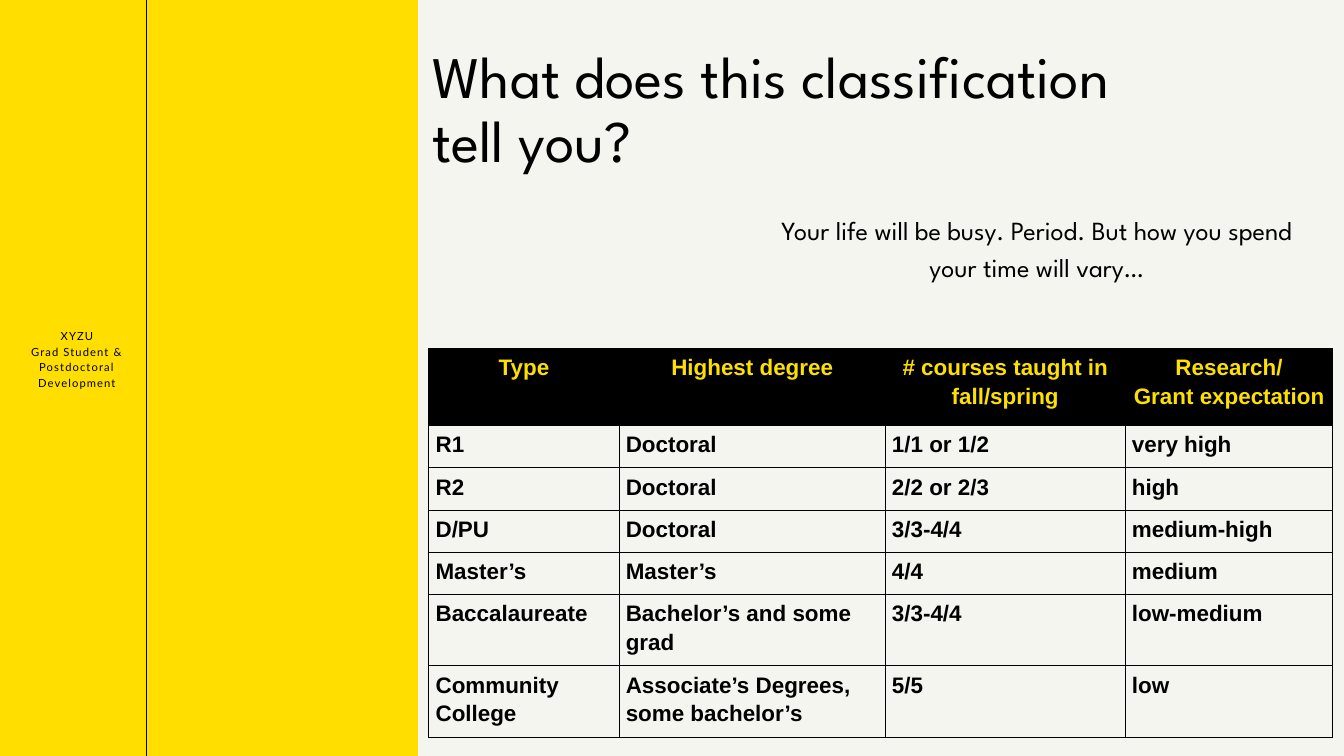
import pptx
import pptx.dml.color
import pptx.enum.shapes
import pptx.enum.text
import pptx.oxml
import pptx.oxml.ns
import pptx.util
from lxml import etree

Cm = pptx.util.Cm
Pt = pptx.util.Pt
RGBColor = pptx.dml.color.RGBColor
ALIGN = pptx.enum.text.PP_ALIGN

YELLOW = RGBColor(0xFF, 0xDE, 0x00)
GOLD = RGBColor(0xFD, 0xDF, 0x00)
BLACK = RGBColor(0x00, 0x00, 0x00)
PAPER = RGBColor(0xF5, 0xF5, 0xEF)

PAGE_WIDTH, PAGE_HEIGHT = Cm(50.8), Cm(28.58)

TITLE = {"name": "League Spartan", "size": Pt(63.1)}
REMARK = {"name": "League Spartan", "size": Pt(28)}
LABEL = {"name": "Lato", "size": Pt(12)}
CELL = {"name": "Arial", "size": Pt(24), "bold": True}

COLUMN_WIDTHS = [7.19, 10.06, 9.07, 7.85]
ROW_HEIGHTS = [2.9] + [1.6] * 4 + [2.69] * 2
ROWS = [
    ["Type", "Highest degree", "# courses taught in fall/spring", "Research/\nGrant expectation"],
    ["R1", "Doctoral", "1/1 or 1/2", "very high"],
    ["R2", "Doctoral", "2/2 or 2/3", "high"],
    ["D/PU", "Doctoral", "3/3-4/4", "medium-high"],
    ["Master’s", "Master’s", "4/4", "medium"],
    ["Baccalaureate", "Bachelor’s and some grad", "3/3-4/4", "low-medium"],
    ["Community College", "Associate’s Degrees, some bachelor’s", "5/5", "low"],
]


def write_para(para, text, font, color, align, line_spacing, tracking=None):
    """Fill one paragraph and format its runs."""
    para.text = text
    para.alignment = align
    para.line_spacing = line_spacing
    for span in para.runs:
        for key, value in font.items():
            setattr(span.font, key, value)
        span.font.color.rgb = color
        if tracking:
            span.font._element.set("spc", str(tracking))


def add_text(page, box, lines, font, align, line_spacing, tracking=None):
    """Place a text box without margins, one paragraph for each line."""
    frame = page.shapes.add_textbox(*box).text_frame
    layout = {"word_wrap": True, "margin_left": 0, "margin_top": 0,
              "margin_right": 0, "margin_bottom": 0}
    for key, value in layout.items():
        setattr(frame, key, value)
    for index, line in enumerate(lines):
        para = frame.paragraphs[0] if index == 0 else frame.add_paragraph()
        write_para(para, line, font, BLACK, align, line_spacing, tracking)


def add_side_panel(page, left, top, width, height):
    """Draw the yellow panel with its vertical rule and department label."""
    panel = page.shapes.add_shape(
        pptx.enum.shapes.MSO_SHAPE.RECTANGLE, left, top, width, height)
    panel.shadow.inherit = False
    panel.fill.solid()
    panel.fill.fore_color.rgb = YELLOW
    panel.line.fill.background()

    rule_x = left + Cm(5.55)
    rule = page.shapes.add_connector(
        pptx.enum.shapes.MSO_CONNECTOR.STRAIGHT, rule_x, top, rule_x, top + height)
    rule.line.color.rgb = BLACK
    rule.line.width = Pt(1)
    etree.SubElement(rule._element.spPr, pptx.oxml.ns.qn("a:effectLst"))

    label_box = (left + Cm(0.84), top + Cm(12.37), Cm(4.14), Cm(2.39))
    add_text(page, label_box, ["XYZU", "Grad Student & Postdoctoral Development"],
             LABEL, ALIGN.CENTER, Pt(16.8), 120)


def add_heading(page, left, top, width):
    """Place the title and, to the right below it, the remark."""
    add_text(page, (left, top, Cm(27.66), Cm(4.98)),
             ["What does this classification tell you?"],
             TITLE, ALIGN.LEFT, Pt(69.5))
    remark_width = Cm(20.8)
    add_text(page, (left + width - remark_width, top + Cm(6.22), remark_width, Cm(2.72)),
             ["Your life will be busy. Period. But how you spend your time will vary…"],
             REMARK, ALIGN.CENTER, Pt(39.2))


def add_cell_borders(cell):
    """Give a cell a thin black border on all sides."""
    properties = cell._tc.get_or_add_tcPr()
    for index, side in enumerate(("lnL", "lnR", "lnT", "lnB")):
        properties.insert(index, pptx.oxml.parse_xml(
            f'<a:{side} {pptx.oxml.ns.nsdecls("a")} w="{Pt(1)}"><a:solidFill>'
            f'<a:srgbClr val="{BLACK}"/></a:solidFill></a:{side}>'))


def add_workload_table(page, left, top):
    """Build the table of institution types and expectations."""
    table = page.shapes.add_table(
        len(ROWS), len(COLUMN_WIDTHS), left, top,
        Cm(sum(COLUMN_WIDTHS)), Cm(sum(ROW_HEIGHTS))).table
    table.horz_banding = False
    for column, width in zip(table.columns, COLUMN_WIDTHS):
        column.width = Cm(width)
    for row_index, (row, height, texts) in enumerate(zip(table.rows, ROW_HEIGHTS, ROWS)):
        row.height = Cm(height)
        header = row_index == 0
        for cell, text in zip(row.cells, texts):
            if header:
                cell.fill.solid()
                cell.fill.fore_color.rgb = BLACK
            else:
                cell.fill.background()
            add_cell_borders(cell)
            write_para(cell.text_frame.paragraphs[0], text, CELL,
                       GOLD if header else BLACK,
                       ALIGN.CENTER if header else ALIGN.LEFT, 1.15)


def main():
    """Build and save the deck."""
    deck = pptx.Presentation()
    deck.slide_width, deck.slide_height = PAGE_WIDTH, PAGE_HEIGHT
    page = deck.slides.add_slide(deck.slide_layouts[6])
    page.background.fill.solid()
    page.background.fill.fore_color.rgb = PAPER
    add_side_panel(page, 0, 0, Cm(15.8), PAGE_HEIGHT)
    add_heading(page, Cm(16.33), Cm(1.7), Cm(33.25))
    add_workload_table(page, Cm(16.21), Cm(13.18))
    deck.save("out.pptx")


if __name__ == "__main__":
    main()
